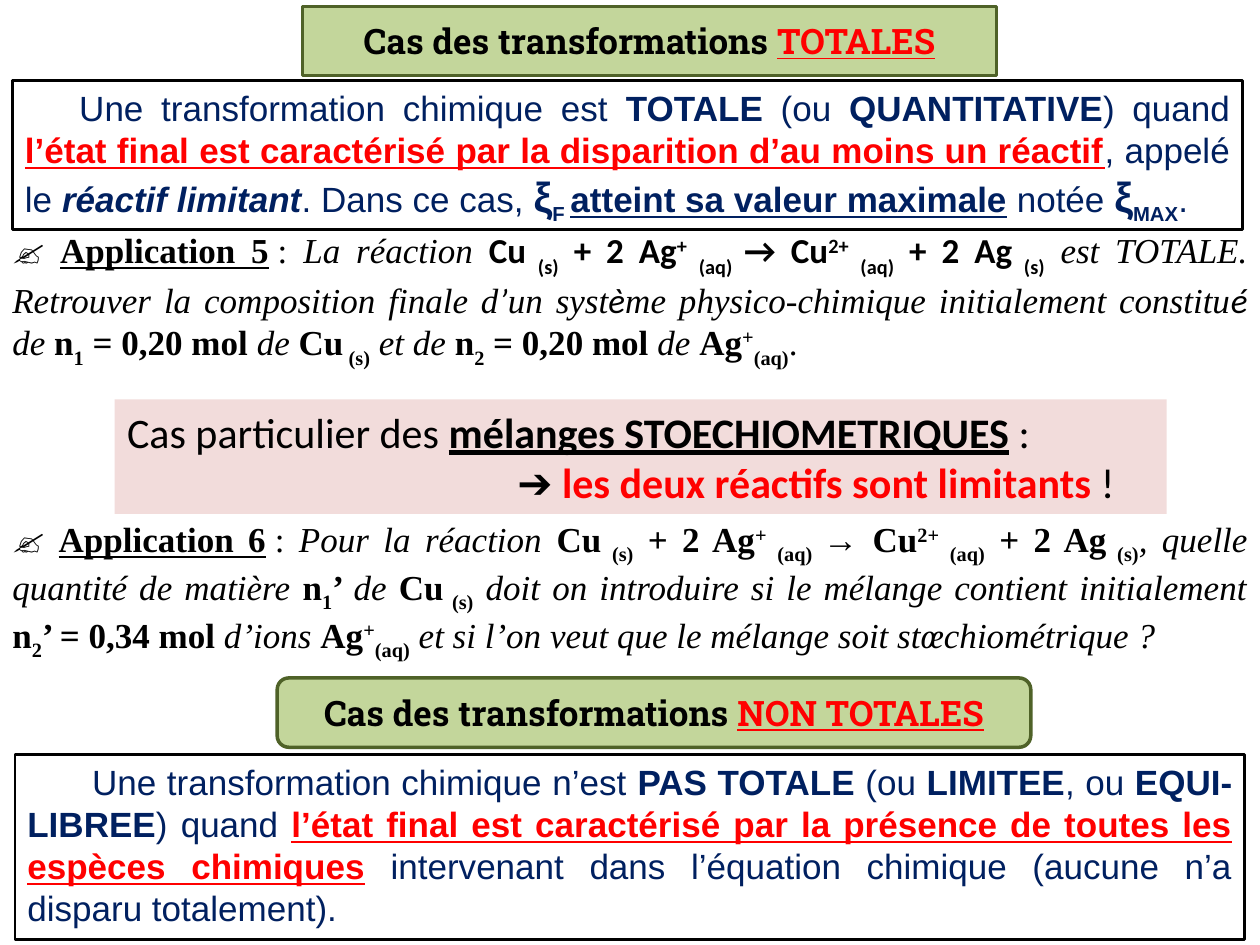
"""Build the slide on total and non-total chemical transformations."""
from dataclasses import dataclass
from typing import Optional

from pptx import Presentation
from pptx.dml.color import RGBColor
from pptx.enum.shapes import MSO_SHAPE
from pptx.enum.text import MSO_ANCHOR, MSO_AUTO_SIZE, PP_ALIGN
from pptx.oxml.ns import qn
from pptx.util import Pt
from lxml.etree import SubElement

COLORS = {
    "black": "000000", "red": "FF0000", "navy": "002060",
    "green": "C3D69B", "dark_green": "4F6228", "pink": "F2DCDB",
}
SERIF, SANS, BODY, SLAB = "Times New Roman", "Arial", "Calibri", "Roboto Slab"


@dataclass
class Span:
    """Text with marks: b bold, i italic, u underline, ^ superscript, _ subscript."""
    text: str
    marks: str = ""
    color: Optional[str] = None
    font: Optional[str] = None
    size: Optional[float] = None


@dataclass
class Line:
    spans: list[Span]
    first_indent: float = 0
    left_indent: float = 0


@dataclass
class Panel:
    left: float
    top: float
    width: float
    height: float
    lines: list[Line]
    font: str
    size: float = 20
    color: str = "black"
    fill: Optional[str] = None
    outline: Optional[str] = None
    outline_width: float = 1.5
    anchor: MSO_ANCHOR = MSO_ANCHOR.TOP
    align: PP_ALIGN = PP_ALIGN.JUSTIFY
    subscript: int = -25


def rgb(name: str) -> RGBColor:
    return RGBColor.from_string(COLORS[name])


def add_span(paragraph, span: Span, panel: Panel) -> None:
    run = paragraph.add_run()
    run.text = span.text
    font = run.font
    font.name = span.font or panel.font
    font.size = Pt(span.size or panel.size)
    font.bold = "b" in span.marks
    font.italic = "i" in span.marks
    font.underline = "u" in span.marks
    font.color.rgb = rgb(span.color or panel.color)
    for mark, percent in (("^", 30), ("_", panel.subscript)):
        if mark in span.marks:
            run._r.get_or_add_rPr().set("baseline", str(percent * 1000))


def write_text(shape, panel: Panel) -> None:
    frame = shape.text_frame
    frame.word_wrap = True
    frame.auto_size = MSO_AUTO_SIZE.NONE
    frame.vertical_anchor = panel.anchor
    for index, line in enumerate(panel.lines):
        paragraph = frame.add_paragraph() if index else frame.paragraphs[0]
        paragraph.alignment = panel.align
        properties = paragraph._p.get_or_add_pPr()
        properties.set("marL", str(Pt(line.left_indent)))
        properties.set("indent", str(Pt(line.first_indent)))
        for span in line.spans:
            add_span(paragraph, span, panel)


def paint(shape, panel: Panel) -> None:
    if panel.fill:
        shape.fill.solid()
        shape.fill.fore_color.rgb = rgb(panel.fill)
    else:
        shape.fill.background()
    if panel.outline:
        shape.line.color.rgb = rgb(panel.outline)
        shape.line.width = Pt(panel.outline_width)
    else:
        shape.line.fill.background()


def bounds(panel: Panel) -> tuple[Pt, Pt, Pt, Pt]:
    return Pt(panel.left), Pt(panel.top), Pt(panel.width), Pt(panel.height)


def add_panel(slide, panel: Panel, geometry: MSO_SHAPE = MSO_SHAPE.RECTANGLE) -> None:
    shape = slide.shapes.add_shape(geometry, *bounds(panel))
    shape.shadow.inherit = False
    paint(shape, panel)
    write_text(shape, panel)


def add_text(slide, panel: Panel) -> None:
    write_text(slide.shapes.add_textbox(*bounds(panel)), panel)


def fill_title(slide, panel: Panel) -> None:
    title = slide.shapes.title
    title.left, title.top, title.width, title.height = bounds(panel)
    geometry = SubElement(title._element.spPr, qn("a:prstGeom"), prst="roundRect")
    SubElement(geometry, qn("a:avLst"))
    paint(title, panel)
    write_text(title, panel)


def heading(left: float, top: float, width: float, ending: str) -> Panel:
    spans = [Span("Cas des transformations ", "b"), Span(ending, "bu", "red")]
    return Panel(left, top, width, 39.6, [Line(spans)], SLAB, fill="green",
                 outline="dark_green", outline_width=2,
                 anchor=MSO_ANCHOR.MIDDLE, align=PP_ALIGN.CENTER)


def exercise_label(number: int) -> list[Span]:
    return [Span("✍ ", "b"), Span(f"Application {number}", "bu"), Span("\u00a0: ")]


def reaction(font: str) -> list[Span]:
    parts = [("Cu", "b"), (" (s)", "b_"), (" + 2 Ag", "b"), ("+", "b^"),
             (" (aq) ", "b_"), ("→ Cu", "b"), ("2+", "b^"), (" (aq)", "b_"),
             (" + 2 Ag", "b"), (" (s)", "b_")]
    return [Span(text, marks, font=font) for text, marks in parts]


def amount(index: str, ending: str) -> list[Span]:
    return [Span("n", "b"), Span(index, "b_"), Span(ending, "b")]


COPPER = [Span("Cu", "b"), Span(" (s)", "b_")]
SILVER_ION = [Span("Ag", "b"), Span("+", "b^"), Span("(aq)", "b_")]

TOTAL_DEFINITION = [
    Span("Une transformation chimique est "), Span("TOTALE", "b"), Span(" (ou "),
    Span("QUANTITATIVE", "b"), Span(") quand "),
    Span("l’état final est caractérisé par la disparition d’au moins un réactif", "bu", "red"),
    Span(", appelé le "), Span("réactif limitant", "bi"), Span(". Dans ce cas, "),
    Span("ξ", "b", size=24), Span("F ", "b_"), Span("atteint sa valeur maximale", "bu"),
    Span(" notée ", "b" * 0), Span("ξ", "b", size=24), Span("MAX", "b_"), Span("."),
]
PARTIAL_DEFINITION = [
    Span("Une transformation chimique n’est "), Span("PAS TOTALE", "b"), Span(" (ou "),
    Span("LIMITEE", "b"), Span(", ou "), Span("EQUI-LIBREE", "b"), Span(") quand "),
    Span("l’état final est caractérisé par la présence de toutes les espèces chimiques",
         "bu", "red"),
    Span(" intervenant dans l’équation chimique (aucune n’a disparu totalement)."),
]
EXERCISE_5 = [
    *exercise_label(5), Span("La réaction ", "i"), *reaction(BODY),
    Span(" est TOTALE. Retrouver la composition finale d", "i"), Span("’", "i", font=BODY),
    Span("un syst", "i"), Span("è", "i", font=BODY),
    Span("me physico-chimique initialement constitu", "i"), Span("é", "i", font=BODY),
    Span(" de ", "i"), *amount("1", " = 0,20 mol"), Span(" de ", "i"), *COPPER,
    Span(" et de ", "i"), *amount("2", " = 0,20 mol"), Span(" de ", "i"), *SILVER_ION,
    Span("."),
]
EXERCISE_6 = [
    *exercise_label(6), Span("Pour la réaction ", "i"), *reaction(SERIF),
    Span(", quelle quantité de matière ", "i"), *amount("1", "’ "), Span("de ", "i"), *COPPER,
    Span(" doit on introduire si le mélange contient initialement ", "i"),
    *amount("2", "’ = 0,34 mol"), Span(" d’ions ", "i"), *SILVER_ION,
    Span(" et si l’on veut que le mélange soit stœchiométrique\u00a0?", "i"),
]
SPECIAL_CASE = [
    Line([Span("Cas particulier des "), Span("mélanges STOECHIOMETRIQUES", "bu"), Span(" :")]),
    Line([Span("➔ "), Span("les deux réactifs sont limitants", "b", "red"), Span(" !")],
         left_indent=223),
]


def main() -> None:
    presentation = Presentation()
    presentation.slide_width, presentation.slide_height = Pt(720), Pt(540)
    slide = presentation.slides.add_slide(presentation.slide_layouts[5])
    fill_title(slide, heading(172.8, 3.6, 396.7, "TOTALES"))
    add_panel(slide, Panel(7.2, 46, 702.7, 85, [Line(TOTAL_DEFINITION, 31)], SANS,
                           color="navy", outline="black"))
    add_text(slide, Panel(0, 131, 720, 80, [Line(EXERCISE_5)], SERIF,
                          anchor=MSO_ANCHOR.MIDDLE, subscript=-30))
    add_panel(slide, Panel(65.5, 228.2, 601.2, 65.5, SPECIAL_CASE, BODY, size=24,
                           fill="pink", anchor=MSO_ANCHOR.MIDDLE))
    add_text(slide, Panel(0, 292.3, 720, 80, [Line(EXERCISE_6)], SERIF))
    add_panel(slide, heading(158.4, 387.4, 430.6, "NON TOTALES"), MSO_SHAPE.ROUNDED_RECTANGLE)
    add_panel(slide, Panel(8.6, 431.3, 702.7, 105.8, [Line(PARTIAL_DEFINITION, 37)], SANS,
                           color="navy", outline="black"))
    presentation.save("out.pptx")


if __name__ == "__main__":
    main()
